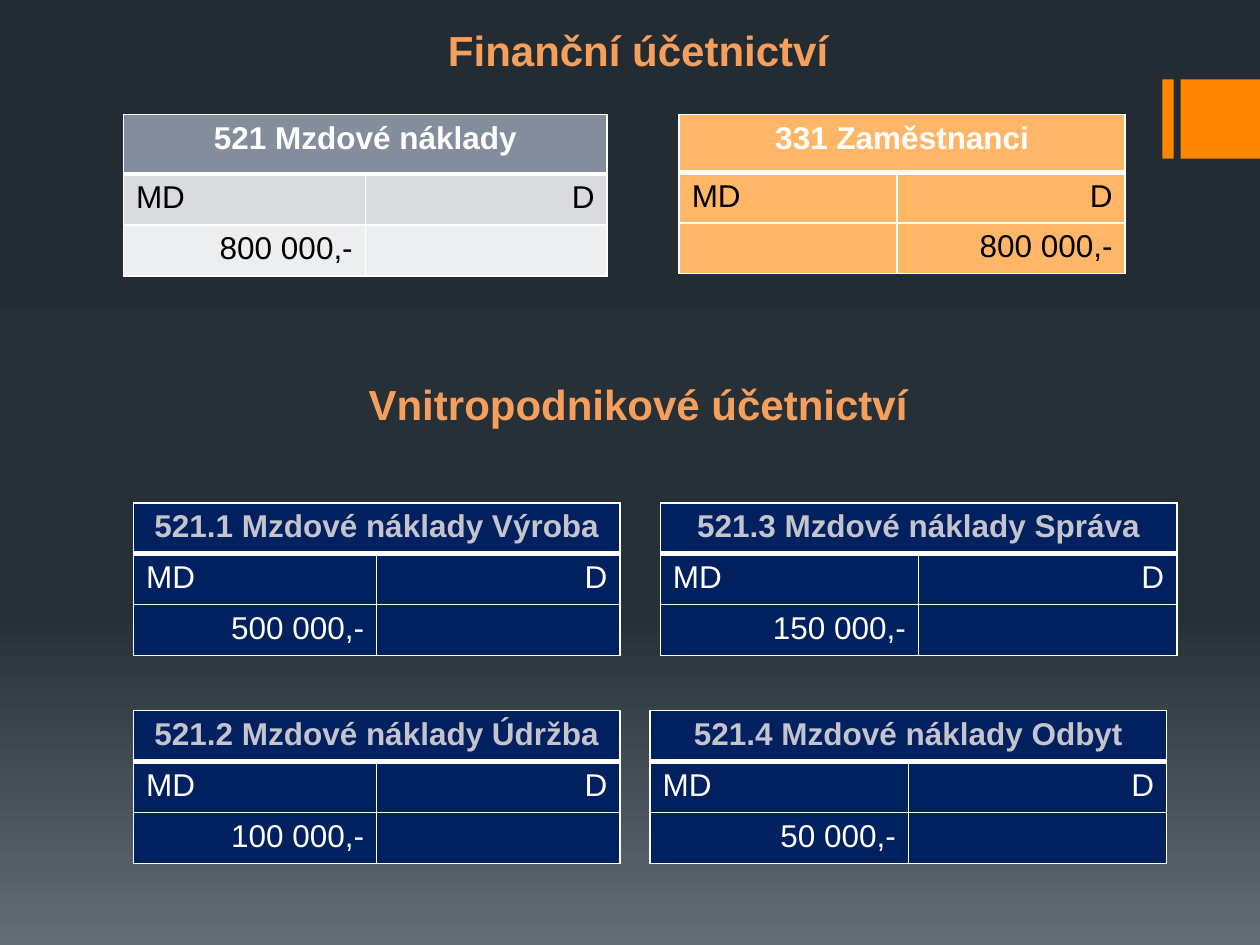
"""Build a slide of wage accounts in financial and internal accounting."""
from lxml import etree
from pptx import Presentation, util as u
from pptx.dml.color import RGBColor
from pptx.enum import shapes, text
from pptx.oxml import ns

HUES = {
    "white": "FFFFFF", "black": "000000", "title": "F69E5C", "mark": "FF8600",
    "slate": "838D9B", "mid": "D9DBDE", "pale": "EDEEEF",
    "peach": "FFB666", "navy": "002060", "mist": "C5C4CC",
}
FADE = [(0, "242C33"), (65, "273037"), (100, "636D76")]
FONT = "Arial"
WIDE, HIGH = 10, 7.5

# Content: positions and sizes are percent of the slide's width or height.
HEADS = [("Finanční účetnictví", 5.3), ("Vnitropodnikové účetnictví", 42.67)]
MARKS = [(92.25, 0.9), (93.7, 6.3)]
LOOKS = {
    "cost": {"fills": ("slate", "mid", "pale"), "head": "white", "ink": "black"},
    "staff": {"fills": ("peach",) * 3, "head": "white", "ink": "black"},
    "inner": {"fills": ("navy",) * 3, "head": "mist", "ink": "white"},
}
TOPS = (12.13, 53.2, 75.2)
EVEN = (5.4, 5.4, 5.4)
BOOKS = [
    ("521 Mzdové náklady", "800 000,-", "", "cost", 0, 9.8, (19.2, 19.2), (6.27, 5.4, 5.4)),
    ("331 Zaměstnanci", "", "800 000,-", "staff", 0, 53.9, (17.3, 18.1), (6.13, 5.33, 5.33)),
    ("521.1 Mzdové náklady Výroba", "500 000,-", "", "inner", 1, 10.6, (19.3, 19.3), EVEN),
    ("521.3 Mzdové náklady Správa", "150 000,-", "", "inner", 1, 52.4, (20.5, 20.5), EVEN),
    ("521.2 Mzdové náklady Údržba", "100 000,-", "", "inner", 2, 10.6, (19.3, 19.3), EVEN),
    ("521.4 Mzdové náklady Odbyt", "50 000,-", "", "inner", 2, 51.6, (20.5, 20.5), EVEN),
]


def across(share):
    return u.Inches(WIDE * share / 100)


def down(share):
    return u.Inches(HIGH * share / 100)


def paint(fill, hue):
    fill.solid()
    fill.fore_color.rgb = RGBColor.from_string(HUES[hue])


def write(frame, words, size, hue, bold, align):
    frame.text = words
    para = frame.paragraphs[0]
    para.alignment = align
    for font in [para.font] + [run.font for run in para.runs]:
        font.name, font.size, font.bold = FONT, u.Pt(size), bold
        font.color.rgb = RGBColor.from_string(HUES[hue])


def edge(cell, row):
    props = cell._tc.get_or_add_tcPr()
    thick = {"lnT": 3 if row == 1 else 1, "lnB": 3 if row == 0 else 1}
    for side in ("lnL", "lnR", "lnT", "lnB"):
        line = etree.SubElement(props, ns.qn("a:" + side), w=str(u.Pt(thick.get(side, 1))))
        solid = etree.SubElement(line, ns.qn("a:solidFill"))
        etree.SubElement(solid, ns.qn("a:srgbClr"), val=HUES["white"])


def shade(slide):
    fill = slide.background.fill
    fill.gradient()
    fill.gradient_angle = 270
    stops = slide.background._cSld.find(".//" + ns.qn("a:gsLst"))
    for old in list(stops):
        stops.remove(old)
    for share, hue in FADE:
        stop = etree.SubElement(stops, ns.qn("a:gs"), pos=str(share * 1000))
        etree.SubElement(stop, ns.qn("a:srgbClr"), val=hue)


def mark(slide, left, width):
    box = slide.shapes.add_shape(
        shapes.MSO_SHAPE.RECTANGLE, across(left), down(8.4), across(width), down(8.4))
    box.shadow.inherit = False
    paint(box.fill, "mark")
    box.line.fill.background()


def title(slide, words, mid):
    frame = slide.shapes.add_textbox(
        across(4.6), down(mid - 4), across(92.1), down(8)).text_frame
    frame.word_wrap = True
    frame.vertical_anchor = text.MSO_ANCHOR.MIDDLE
    write(frame, words, 24, "title", True, text.PP_ALIGN.CENTER)


def book(slide, name, debit, credit, kind, band, left, cols, rows):
    look, sides = LOOKS[kind], text.PP_ALIGN
    grid = slide.shapes.add_table(
        3, 2, across(left), down(TOPS[band]), across(sum(cols)), down(sum(rows))).table
    for col, share in zip(grid.columns, cols):
        col.width = across(share)
    for row, share in zip(grid.rows, rows):
        row.height = down(share)
    for r, line in enumerate([(name, ""), ("MD", "D"), (debit, credit)]):
        for c, words in enumerate(line):
            cell = grid.cell(r, c)
            edge(cell, r)
            paint(cell.fill, look["fills"][r])
            align = sides.CENTER if r == 0 else sides.LEFT if (r, c) == (1, 0) else sides.RIGHT
            write(cell.text_frame, words, 18, look["ink" if r else "head"], r == 0, align)
    grid.cell(0, 0).merge(grid.cell(0, 1))


def main():
    deck = Presentation()
    deck.slide_width, deck.slide_height = u.Inches(WIDE), u.Inches(HIGH)
    slide = deck.slides.add_slide(deck.slide_layouts[6])
    shade(slide)
    for item in MARKS:
        mark(slide, *item)
    for item in HEADS:
        title(slide, *item)
    for item in BOOKS:
        book(slide, *item)
    deck.save("out.pptx")


if __name__ == "__main__":
    main()
